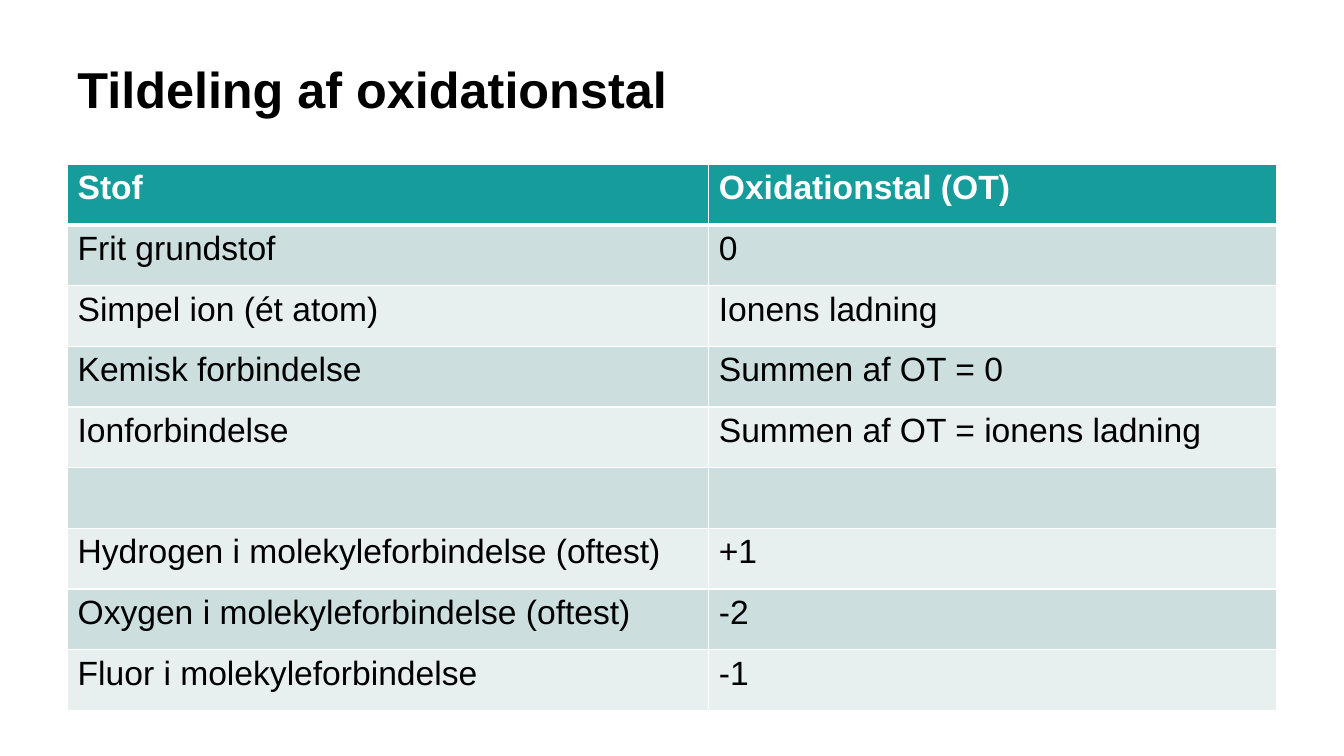
from typing import NamedTuple

from lxml import etree
from pptx import Presentation
from pptx.dml.color import RGBColor
from pptx.enum.text import MSO_ANCHOR, PP_ALIGN
from pptx.oxml.ns import qn
from pptx.slide import Slide
from pptx.table import _Cell
from pptx.text.text import _Paragraph
from pptx.util import Inches, Pt

TOP = MSO_ANCHOR.TOP
LEFT = PP_ALIGN.LEFT

FONT = "Arial"
BLACK = RGBColor(0x00, 0x00, 0x00)
WHITE = RGBColor(0xFF, 0xFF, 0xFF)
TEAL = RGBColor(0x16, 0x9C, 0x9A)
DARK_BAND = RGBColor(0xCC, 0xDE, 0xDE)
LIGHT_BAND = RGBColor(0xE8, 0xEF, 0xEF)

COLUMN_WIDTHS = (6.36, 5.63)
ROW_HEIGHT = 5.42 / 9
THIN, THICK = 1, 3


class Rule(NamedTuple):
    substance: str
    oxidation_number: str


RULES = (
    Rule("Stof", "Oxidationstal (OT)"),
    Rule("Frit grundstof", "0"),
    Rule("Simpel ion (ét atom)", "Ionens ladning"),
    Rule("Kemisk forbindelse", "Summen af OT = 0"),
    Rule("Ionforbindelse", "Summen af OT = ionens ladning"),
    Rule("", ""),
    Rule("Hydrogen i molekyleforbindelse (oftest)", "+1"),
    Rule("Oxygen i molekyleforbindelse (oftest)", "-2"),
    Rule("Fluor i molekyleforbindelse", "-1"),
)


def format_paragraph(paragraph: _Paragraph, size: int, color: RGBColor, bold: bool) -> None:
    paragraph.alignment = LEFT
    for run in paragraph.runs:
        run.font.name = FONT
        run.font.size = Pt(size)
        run.font.bold = bold
        run.font.color.rgb = color


def add_borders(cell: _Cell, top: int, bottom: int) -> None:
    properties = cell._tc.get_or_add_tcPr()
    widths = {"a:lnL": THIN, "a:lnR": THIN, "a:lnT": top, "a:lnB": bottom}
    for tag, width in widths.items():
        line = etree.SubElement(properties, qn(tag), w=str(Pt(width)))
        fill = etree.SubElement(line, qn("a:solidFill"))
        etree.SubElement(fill, qn("a:srgbClr"), val=str(WHITE))


def add_title(slide: Slide, text: str) -> None:
    box = slide.shapes.add_textbox(Inches(0.67), Inches(0.6), Inches(11.65), Inches(1.24))
    frame = box.text_frame
    frame.word_wrap = True
    frame.vertical_anchor = TOP
    frame.text = text
    paragraph = frame.paragraphs[0]
    paragraph.line_spacing = 0.9
    format_paragraph(paragraph, 36, BLACK, True)


def add_rules_table(slide: Slide) -> None:
    table = slide.shapes.add_table(
        len(RULES), len(COLUMN_WIDTHS), Inches(0.67), Inches(1.63),
        Inches(sum(COLUMN_WIDTHS)), Inches(ROW_HEIGHT * len(RULES)),
    ).table
    for column, width in zip(table.columns, COLUMN_WIDTHS):
        column.width = Inches(width)

    for row_index, rule in enumerate(RULES):
        table.rows[row_index].height = Inches(ROW_HEIGHT)
        is_header = row_index == 0
        band = DARK_BAND if row_index % 2 else LIGHT_BAND
        for column_index, text in enumerate(rule):
            cell = table.cell(row_index, column_index)
            add_borders(
                cell,
                top=THICK if row_index == 1 else THIN,
                bottom=THICK if is_header else THIN,
            )
            cell.fill.solid()
            cell.fill.fore_color.rgb = TEAL if is_header else band
            cell.text_frame.text = text
            format_paragraph(
                cell.text_frame.paragraphs[0], 24, WHITE if is_header else BLACK, is_header
            )


def main() -> None:
    presentation = Presentation()
    presentation.slide_width = Inches(13.33)
    presentation.slide_height = Inches(7.5)
    slide = presentation.slides.add_slide(presentation.slide_layouts[6])

    # Heading
    add_title(slide, "Tildeling af oxidationstal")

    # Rules for oxidation numbers
    add_rules_table(slide)

    presentation.save("out.pptx")


if __name__ == "__main__":
    main()
